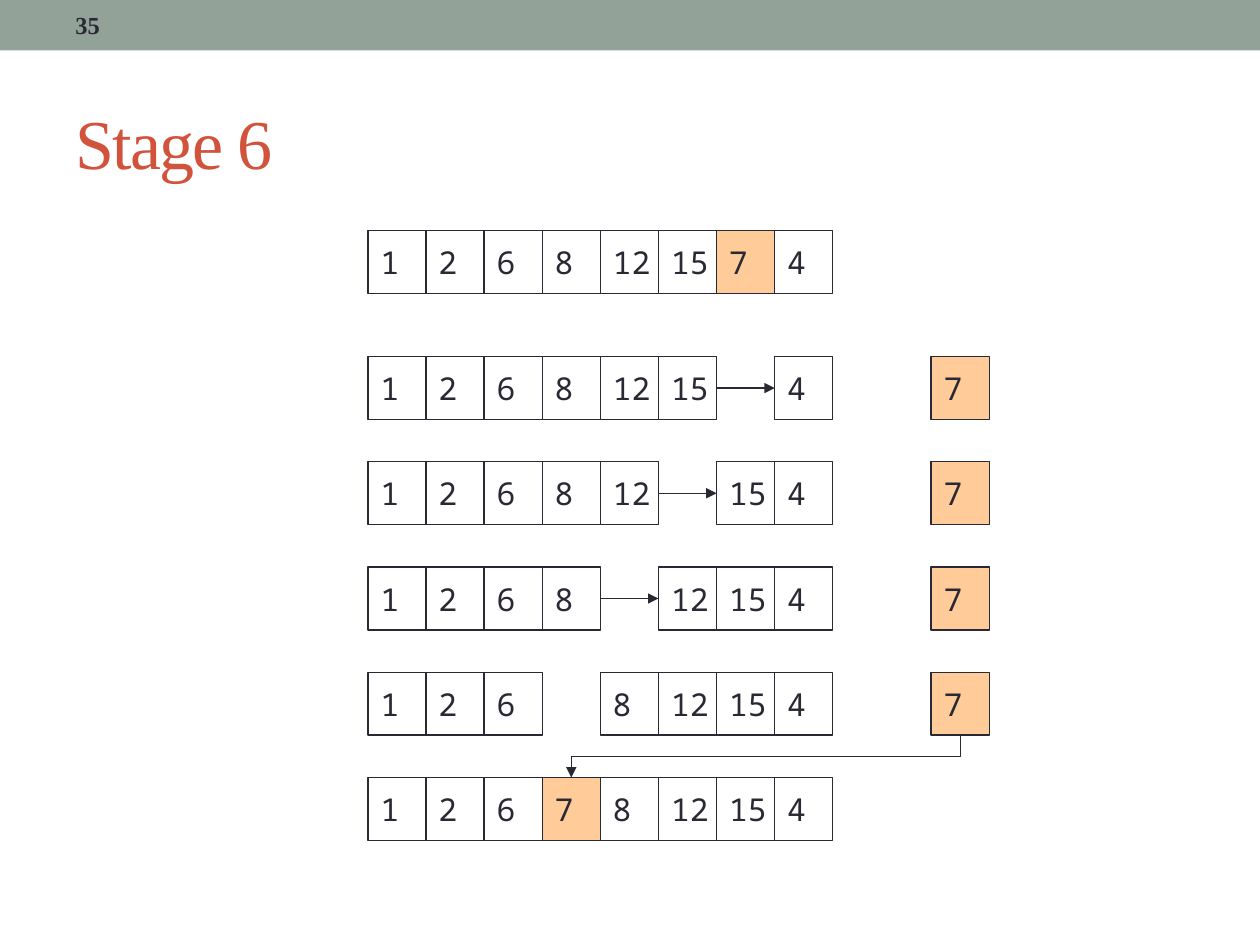
from dataclasses import dataclass
from typing import Optional

from lxml import etree
from pptx import Presentation
from pptx.dml.color import RGBColor
from pptx.enum.shapes import MSO_CONNECTOR, MSO_SHAPE
from pptx.enum.text import MSO_ANCHOR, PP_ALIGN
from pptx.oxml.ns import qn
from pptx.util import Inches, Pt

RECT = MSO_SHAPE.RECTANGLE
STRAIGHT, ELBOW = MSO_CONNECTOR.STRAIGHT, MSO_CONNECTOR.ELBOW
MIDDLE, LEFT = MSO_ANCHOR.MIDDLE, PP_ALIGN.LEFT

COLORS = {"band": "93A299", "ink": "292934", "title": "D2533C", "key": "FFCC99"}
SERIF, MONO = "Times New Roman", "Noto Sans Mono"
ARRAY_LEFT, ARRAY_RIGHT, SLOTS = 2.92, 6.61, 8
CELL_W, CELL_H = (ARRAY_RIGHT - ARRAY_LEFT) / SLOTS, 0.5
HELD_LEFT = 7.39
START_TOP = 1.83
SHIFT_TOP, LAST_TOP = 2.83, 6.17
ROW_PITCH = (LAST_TOP - SHIFT_TOP) / 4
KEY = 7


@dataclass
class Row:
    top: float
    values: list[Optional[int]]
    held: bool = False
    arrow: bool = False


def rgb(name: str) -> RGBColor:
    return RGBColor.from_string(COLORS[name])


def set_text(sp, text: str, font: str, size: float, color: str,
             wrap: bool = True, bold: bool = False) -> None:
    tf = sp.text_frame
    tf.text = text
    tf.word_wrap = wrap
    tf.vertical_anchor = MIDDLE
    p = tf.paragraphs[0]
    p.alignment = LEFT
    r = p.runs[0]
    r.font.name, r.font.size, r.font.bold = font, Pt(size), bold
    r.font.color.rgb = rgb(color)


def add_label(s, left: float, top: float, width: float, height: float,
              text: str, size: float, color: str, bold: bool = False):
    sp = s.shapes.add_textbox(Inches(left), Inches(top), Inches(width), Inches(height))
    set_text(sp, text, SERIF, size, color, bold=bold)
    return sp


def add_rect(s, left: float, top: float, width: float, height: float,
             fill: Optional[str], line: Optional[str]):
    sp = s.shapes.add_shape(RECT, Inches(left), Inches(top), Inches(width), Inches(height))
    sp.shadow.inherit = False
    if fill:
        sp.fill.solid()
        sp.fill.fore_color.rgb = rgb(fill)
    else:
        sp.fill.background()
    if line:
        sp.line.color.rgb = rgb(line)
        sp.line.width = Pt(0.75)
    else:
        sp.line.fill.background()
    return sp


def add_cell(s, left: float, top: float, value: int) -> None:
    sp = add_rect(s, left, top, CELL_W, CELL_H, "key" if value == KEY else None, "ink")
    set_text(sp, str(value), MONO, 18, "ink", wrap=False)


def add_arrow(s, kind, x1: float, y1: float, x2: float, y2: float):
    cxn = s.shapes.add_connector(kind, Inches(x1), Inches(y1), Inches(x2), Inches(y2))
    cxn.line.color.rgb = rgb("ink")
    cxn.line.width = Pt(0.75)
    etree.SubElement(cxn.line._get_or_add_ln(), qn("a:tailEnd"), type="triangle")
    etree.SubElement(cxn._element.spPr, qn("a:effectLst"))
    return cxn


def add_down_elbow(s, x1: float, y1: float, x2: float, y2: float) -> None:
    cx, cy = (x1 + x2) / 2, (y1 + y2) / 2
    half_w, half_h = (y2 - y1) / 2, (x1 - x2) / 2
    cxn = add_arrow(s, ELBOW, cx - half_w, cy - half_h, cx + half_w, cy + half_h)
    cxn._element.spPr.find(qn("a:xfrm")).set("rot", "5400000")


def slot_left(slot: int) -> float:
    return ARRAY_LEFT + slot * CELL_W


def draw_row(s, row: Row) -> None:
    for slot, value in enumerate(row.values):
        if value is not None:
            add_cell(s, slot_left(slot), row.top, value)
    if row.held:
        add_cell(s, HELD_LEFT, row.top, KEY)
    if row.arrow:
        gap = row.values.index(None)
        y = row.top + CELL_H / 2
        add_arrow(s, STRAIGHT, slot_left(gap), y, slot_left(gap + 1), y)


def build_rows() -> list[Row]:
    others = [1, 2, 6, 8, 12, 15, 4]
    start, goal = 6, 3

    def with_slot(slot: int, value: Optional[int]) -> list[Optional[int]]:
        return others[:slot] + [value] + others[slot:]

    shifts = [Row(SHIFT_TOP + i * ROW_PITCH, with_slot(gap, None), True, gap > goal)
              for i, gap in enumerate(range(start, goal - 1, -1))]
    return [Row(START_TOP, with_slot(start, KEY)), *shifts,
            Row(LAST_TOP, with_slot(goal, KEY))]


def main() -> None:
    prs = Presentation()
    prs.slide_width, prs.slide_height = Inches(10), Inches(7.5)
    s = prs.slides.add_slide(prs.slide_layouts[6])

    add_rect(s, 0, 0, 10, 0.4, "band", None)
    add_label(s, 0.5, 0.02, 3.17, 0.36, "35", 14, "ink", bold=True)
    title = add_label(s, 0.5, 0.58, 9, 1.08, "Stage 6", 40, "title")
    title.text_frame.paragraphs[0].runs[0].font._element.set("spc", "-100")

    rows = build_rows()
    for row in rows:
        draw_row(s, row)

    target = rows[-1].values.index(KEY)
    add_down_elbow(s, HELD_LEFT + CELL_W / 2, rows[-2].top + CELL_H,
                   slot_left(target) + CELL_W / 2, LAST_TOP)
    prs.save("out.pptx")


if __name__ == "__main__":
    main()
